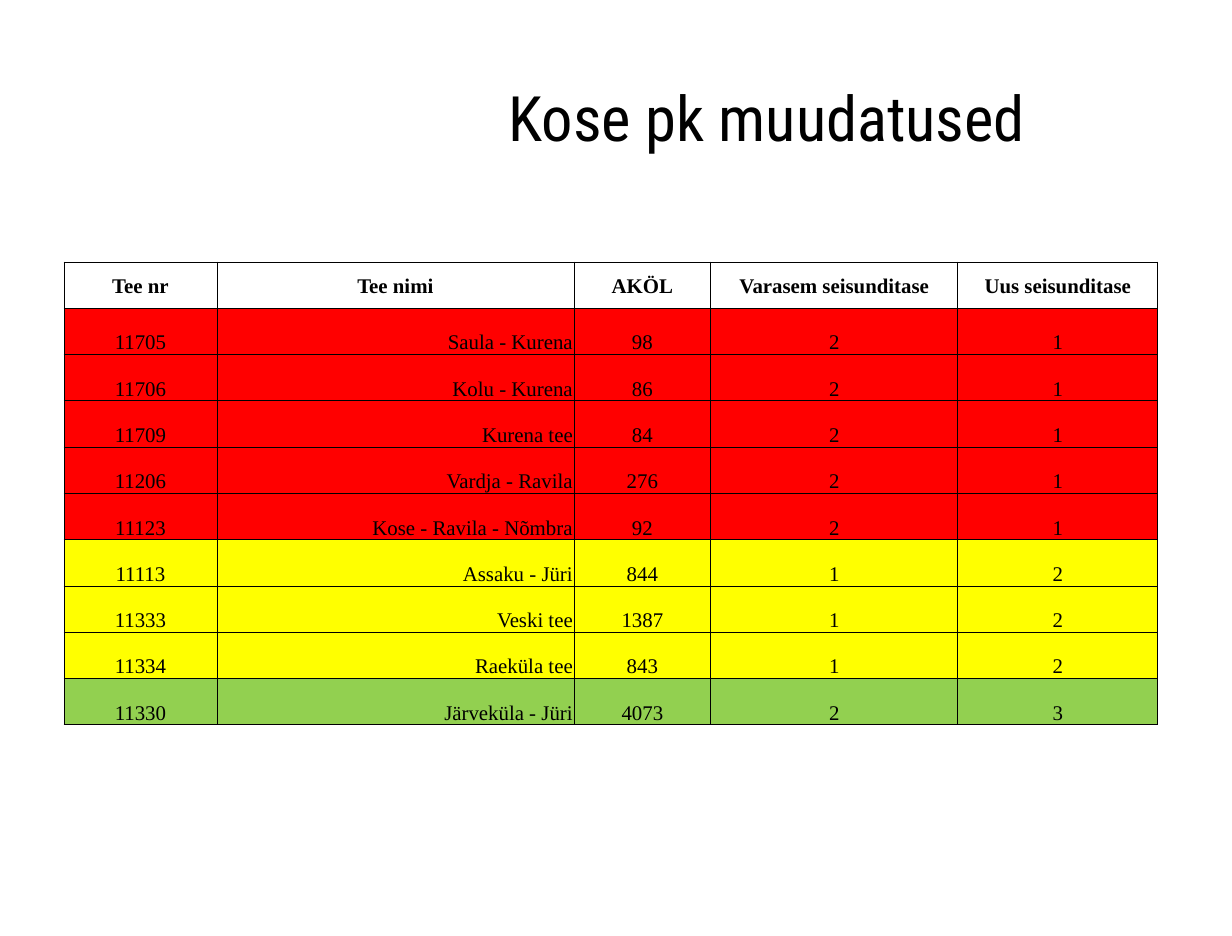
from lxml import etree
from pptx import Presentation
from pptx.dml.color import RGBColor
from pptx.enum.text import MSO_ANCHOR as ANCHOR, PP_ALIGN as ALIGN
from pptx.oxml.ns import qn
from pptx.util import Pt

BLACK = RGBColor(0x00, 0x00, 0x00)
WHITE = RGBColor(0xFF, 0xFF, 0xFF)
RED = RGBColor(0xFF, 0x00, 0x00)
YELLOW = RGBColor(0xFF, 0xFF, 0x00)
GREEN = RGBColor(0x92, 0xD0, 0x50)


def px(n):
    return round(n * 914400 / 125.2)


def add_text(tf, text, font, size, align, bold=False):
    p = tf.paragraphs[0]
    p.alignment = align
    r = p.add_run()
    r.text = text
    r.font.name = font
    r.font.size = Pt(size)
    r.font.bold = bold
    r.font.color.rgb = BLACK
    return p


prs = Presentation()
prs.slide_width, prs.slide_height = px(1232), px(936)
s = prs.slides.add_slide(prs.slide_layouts[6])

# Title
title = s.shapes.add_textbox(px(364), px(38), px(806), px(156))
tf = title.text_frame
tf.word_wrap = True
tf.vertical_anchor = ANCHOR.MIDDLE
add_text(tf, "Kose pk muudatused", "Roboto Condensed", 36, ALIGN.CENTER)

# Road table: row colour, then cell texts
rows = [
    (WHITE, "Tee nr", "Tee nimi", "AKÖL", "Varasem seisunditase", "Uus seisunditase"),
    (RED, "11705", "Saula - Kurena", "98", "2", "1"),
    (RED, "11706", "Kolu - Kurena", "86", "2", "1"),
    (RED, "11709", "Kurena tee", "84", "2", "1"),
    (RED, "11206", "Vardja - Ravila", "276", "2", "1"),
    (RED, "11123", "Kose - Ravila - Nõmbra", "92", "2", "1"),
    (YELLOW, "11113", "Assaku - Jüri", "844", "1", "2"),
    (YELLOW, "11333", "Veski tee", "1387", "1", "2"),
    (YELLOW, "11334", "Raeküla tee", "843", "1", "2"),
    (GREEN, "11330", "Järveküla - Jüri", "4073", "2", "3"),
]
col_widths = [153, 357, 137, 247, 200]
NAME_COL = 1

table = s.shapes.add_table(len(rows), len(col_widths), px(64), px(262),
                           px(sum(col_widths)), px(463)).table
table.first_row = table.horz_banding = False
for col, width in zip(table.columns, col_widths):
    col.width = px(width)

for i, (colour, *texts) in enumerate(rows):
    header = i == 0
    for j, text in enumerate(texts):
        cell = table.cell(i, j)
        cell.margin_left = cell.margin_right = cell.margin_top = px(1)
        cell.margin_bottom = 0
        cell.vertical_anchor = ANCHOR.MIDDLE if header else ANCHOR.BOTTOM
        align = ALIGN.RIGHT if j == NAME_COL and not header else ALIGN.CENTER
        p = add_text(cell.text_frame, text, "Times New Roman", 12, align, header)
        p.line_spacing = 1.1

        # Cell borders come before the fill
        tcPr = cell._tc.get_or_add_tcPr()
        for side in ("a:lnL", "a:lnR", "a:lnT", "a:lnB"):
            ln = etree.SubElement(tcPr, qn(side), w=str(Pt(0.5)))
            line_fill = etree.SubElement(ln, qn("a:solidFill"))
            etree.SubElement(line_fill, qn("a:srgbClr"), val=str(BLACK))
        cell.fill.solid()
        cell.fill.fore_color.rgb = colour

prs.save("out.pptx")
